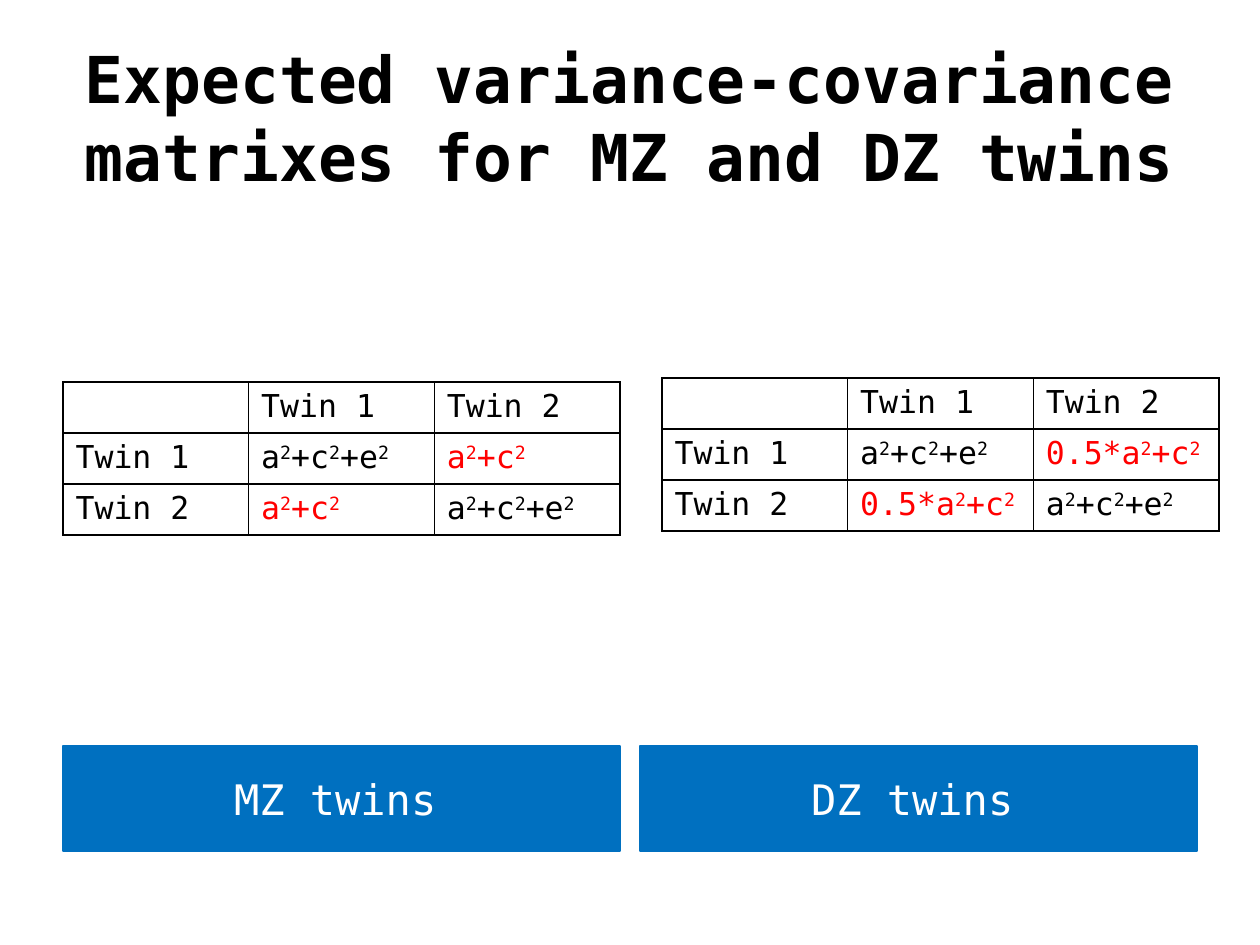
"""Build a slide of expected variance-covariance matrixes for MZ and DZ twins."""
from lxml import etree
from pptx import Presentation, util as u
from pptx.dml.color import RGBColor
from pptx.enum import shapes, text
from pptx.oxml.ns import qn

THEME = {
    "font": "DejaVu Sans Mono", "title": 36.9, "label": 24, "cell": 18,
    "black": "000000", "white": "FFFFFF", "red": "FF0000", "blue": "0070C0",
}
PX = 914400 / 126


def px(*values):
    return [u.Emu(round(v * PX)) for v in values]


def style(p, size, color, bold=False):
    p.font.name = THEME["font"]
    p.font.size = u.Pt(THEME[size])
    p.font.bold = bold
    p.font.color.rgb = RGBColor.from_string(THEME[color])


prs = Presentation()
prs.slide_width, prs.slide_height = px(1260, 945)
s = prs.slides.add_slide(prs.slide_layouts[6])

tf = s.shapes.add_textbox(*px(63, 38, 1134, 157)).text_frame
tf.word_wrap = True
tf.vertical_anchor = text.MSO_ANCHOR.MIDDLE
p = tf.paragraphs[0]
p.text = "Expected variance-covariance matrixes for MZ and DZ twins"
p.alignment = text.PP_ALIGN.CENTER
style(p, "title", "black", bold=True)

for label, x in (("MZ twins ", 63), ("DZ twins ", 640)):
    sp = s.shapes.add_shape(shapes.MSO_SHAPE.RECTANGLE, *px(x, 746, 557, 105))
    sp.shadow.inherit = False
    sp.fill.solid()
    sp.fill.fore_color.rgb = RGBColor.from_string(THEME["blue"])
    sp.line.color.rgb = RGBColor.from_string(THEME["blue"])
    sp.line.width = u.Pt(0.75)
    tf = sp.text_frame
    tf.margin_left = u.Inches(0.2)
    tf.vertical_anchor = text.MSO_ANCHOR.MIDDLE
    p = tf.paragraphs[0]
    p.text = label
    p.alignment = text.PP_ALIGN.CENTER
    p.space_before = u.Pt(4)
    style(p, "label", "white")

VARIANCE = "a²+c²+e²"
for covariance, x, y in (("a²+c²", 63, 382), ("0.5*a²+c²", 662, 378)):
    rows = [
        ["", "Twin 1", "Twin 2"],
        ["Twin 1", VARIANCE, covariance],
        ["Twin 2", covariance, VARIANCE],
    ]
    table = s.shapes.add_table(3, 3, *px(x, y, 557, 153)).table
    for i, row in enumerate(rows):
        for j, value in enumerate(row):
            cell = table.cell(i, j)
            cell.fill.solid()
            cell.fill.fore_color.rgb = RGBColor.from_string(THEME["white"])
            p = cell.text_frame.paragraphs[0]
            style(p, "cell", "red" if value == covariance else "black")
            for part in value.replace("²", "|²|").split("|"):
                if part:
                    r = p.add_run()
                    r.text = part.replace("²", "2")
                    if part == "²":
                        r.font._element.set("baseline", "30000")
            tcPr = cell._tc.get_or_add_tcPr()
            for k, side in enumerate(("lnL", "lnR", "lnT", "lnB")):
                ln = etree.Element(qn(f"a:{side}"), w=str(u.Pt(1)))
                fill = etree.SubElement(ln, qn("a:solidFill"))
                etree.SubElement(fill, qn("a:srgbClr"), val=THEME["black"])
                tcPr.insert(k, ln)

prs.save("out.pptx")
